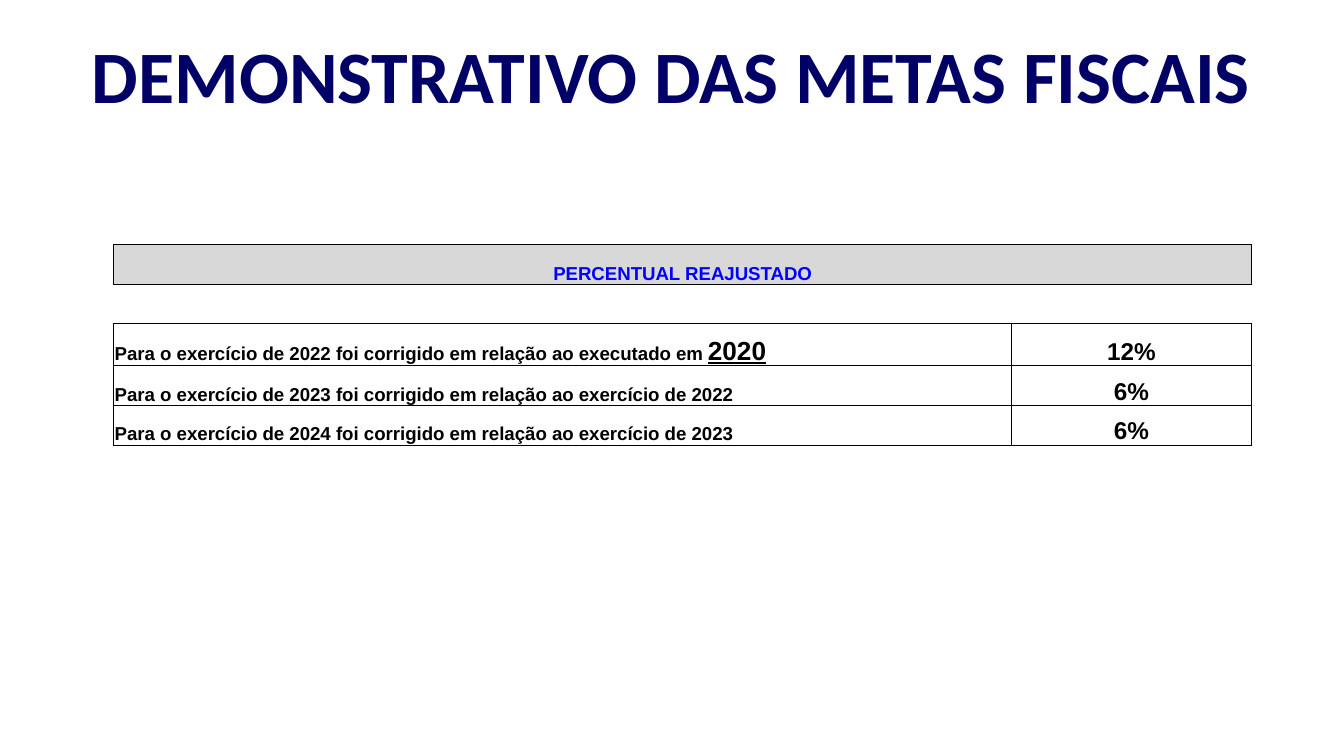
import pptx
import pptx.util
import pptx.dml.color
import pptx.enum.shapes
import pptx.enum.text
import pptx.oxml
import pptx.oxml.ns

Inches, Pt = pptx.util.Inches, pptx.util.Pt
ALIGN, ANCHOR = pptx.enum.text.PP_ALIGN, pptx.enum.text.MSO_ANCHOR

TITLE = "DEMONSTRATIVO DAS METAS FISCAIS"
HEADING = "PERCENTUAL REAJUSTADO"
ADJUSTMENTS = [
    ("Para o exercício de 2022 foi corrigido em relação ao executado em ", "2020", "12%"),
    ("Para o exercício de 2023 foi corrigido em relação ao exercício de 2022", "", "6%"),
    ("Para o exercício de 2024 foi corrigido em relação ao exercício de 2023", "", "6%"),
]

PAGE_WIDTH = 10
PAGE_HEIGHT = PAGE_WIDTH * 9 / 16
COLUMN_WIDTHS = [2.16, 1.86, 2.66, 1.79]
ROW_POINTS = [21.25, 21.25, 22.4, 21.25, 21.25, 16.5, 21.25]
LAST_COLUMN = len(COLUMN_WIDTHS) - 1
FIRST_ADJUSTMENT = 2
FIRST_EMPTY = FIRST_ADJUSTMENT + len(ADJUSTMENTS)

HEADING_FORMAT = {"size": Pt(10), "color": "0000FF"}
LABEL_FORMAT = {"size": Pt(10)}
YEAR_FORMAT = {"size": Pt(14), "underline": True}
PERCENT_FORMAT = {"size": Pt(13)}


def rgb(value):
    return pptx.dml.color.RGBColor.from_string(value)


def drawing_element(tag, attributes, content=""):
    return pptx.oxml.parse_xml(
        f'<a:{tag} {pptx.oxml.ns.nsdecls("a")} {attributes}>{content}</a:{tag}>')


def add_span(para, text, color="000000", **font_format):
    span = para.add_run()
    span.text = text
    span.font.color.rgb = rgb(color)
    for name, value in {"name": "Arial", "bold": True, **font_format}.items():
        setattr(span.font, name, value)


def fill_cell(cell, spans, alignment):
    para = cell.text_frame.paragraphs[0]
    para.alignment = alignment
    for text, font_format in spans:
        add_span(para, text, **font_format)


def set_borders(cell, visible):
    """Draw the sides named in visible (letters of LRTB) and hide the others."""
    properties = cell._tc.get_or_add_tcPr()
    for position, side in enumerate("LRTB"):
        paint = '<a:solidFill><a:srgbClr val="000000"/></a:solidFill>' if side in visible else "<a:noFill/>"
        properties.insert(position, drawing_element(f"ln{side}", f'w="{Pt(0.5)}"', paint))


def visible_sides(row, column):
    if row == 0:
        return "LRTB"
    if row == 1:
        return "TB"
    if row < FIRST_EMPTY:
        return "LRTB"
    return "T" if row == FIRST_EMPTY else ""


def add_backdrop(page):
    top = 1.01
    backdrop = page.shapes.add_shape(
        pptx.enum.shapes.MSO_SHAPE.RECTANGLE,
        Inches(0), Inches(top), Inches(PAGE_WIDTH), Inches(PAGE_HEIGHT - top))
    backdrop.shadow.inherit = False
    backdrop.fill.solid()
    for paint in (backdrop.fill.fore_color, backdrop.line.color):
        paint.rgb = rgb("FFFFFF")
    backdrop.line.width = Pt(0.75)


def add_title(page):
    box = page.shapes.add_textbox(Inches(0.34), Inches(0.06), Inches(9.31), Inches(0.98))
    frame = box.text_frame
    frame.word_wrap = True
    frame.vertical_anchor = ANCHOR.MIDDLE
    para = frame.paragraphs[0]
    para.alignment = ALIGN.CENTER
    add_span(para, TITLE, color="000066", name="Calibri", size=Pt(39.6))


def add_adjustment_table(page):
    table = page.shapes.add_table(
        len(ROW_POINTS), len(COLUMN_WIDTHS), Pt(60.75), Inches(1.82),
        Inches(sum(COLUMN_WIDTHS)), Pt(sum(ROW_POINTS))).table
    table.first_row = table.horz_banding = False
    for column, width in zip(table.columns, COLUMN_WIDTHS):
        column.width = Inches(width)
    for row, height in zip(table.rows, ROW_POINTS):
        row.height = Pt(height)

    cell_format = {"margin_left": Inches(0.01), "margin_right": Inches(0.01),
                   "margin_top": Inches(0.01), "margin_bottom": 0,
                   "vertical_anchor": ANCHOR.BOTTOM}
    for row in range(len(ROW_POINTS)):
        for column in range(len(COLUMN_WIDTHS)):
            cell = table.cell(row, column)
            for name, value in cell_format.items():
                setattr(cell, name, value)
            cell.text_frame.paragraphs[0]._p.append(drawing_element("endParaRPr", 'sz="1000"'))
            cell.fill.background()
            set_borders(cell, visible_sides(row, column))

    for row in (0, FIRST_EMPTY, FIRST_EMPTY + 1):
        table.cell(row, 0).merge(table.cell(row, LAST_COLUMN))
    heading = table.cell(0, 0)
    heading.fill.solid()
    heading.fill.fore_color.rgb = rgb("D8D8D8")
    fill_cell(heading, [(HEADING, HEADING_FORMAT)], ALIGN.CENTER)

    for row, (label, year, percent) in enumerate(ADJUSTMENTS, FIRST_ADJUSTMENT):
        table.cell(row, 0).merge(table.cell(row, LAST_COLUMN - 1))
        spans = [(label, LABEL_FORMAT)] + ([(year, YEAR_FORMAT)] if year else [])
        fill_cell(table.cell(row, 0), spans, ALIGN.LEFT)
        fill_cell(table.cell(row, LAST_COLUMN), [(percent, PERCENT_FORMAT)], ALIGN.CENTER)


def main():
    deck = pptx.Presentation()
    deck.slide_width, deck.slide_height = Inches(PAGE_WIDTH), Inches(PAGE_HEIGHT)
    page = deck.slides.add_slide(deck.slide_layouts[6])
    add_backdrop(page)
    add_title(page)
    add_adjustment_table(page)
    deck.save("out.pptx")


if __name__ == "__main__":
    main()
